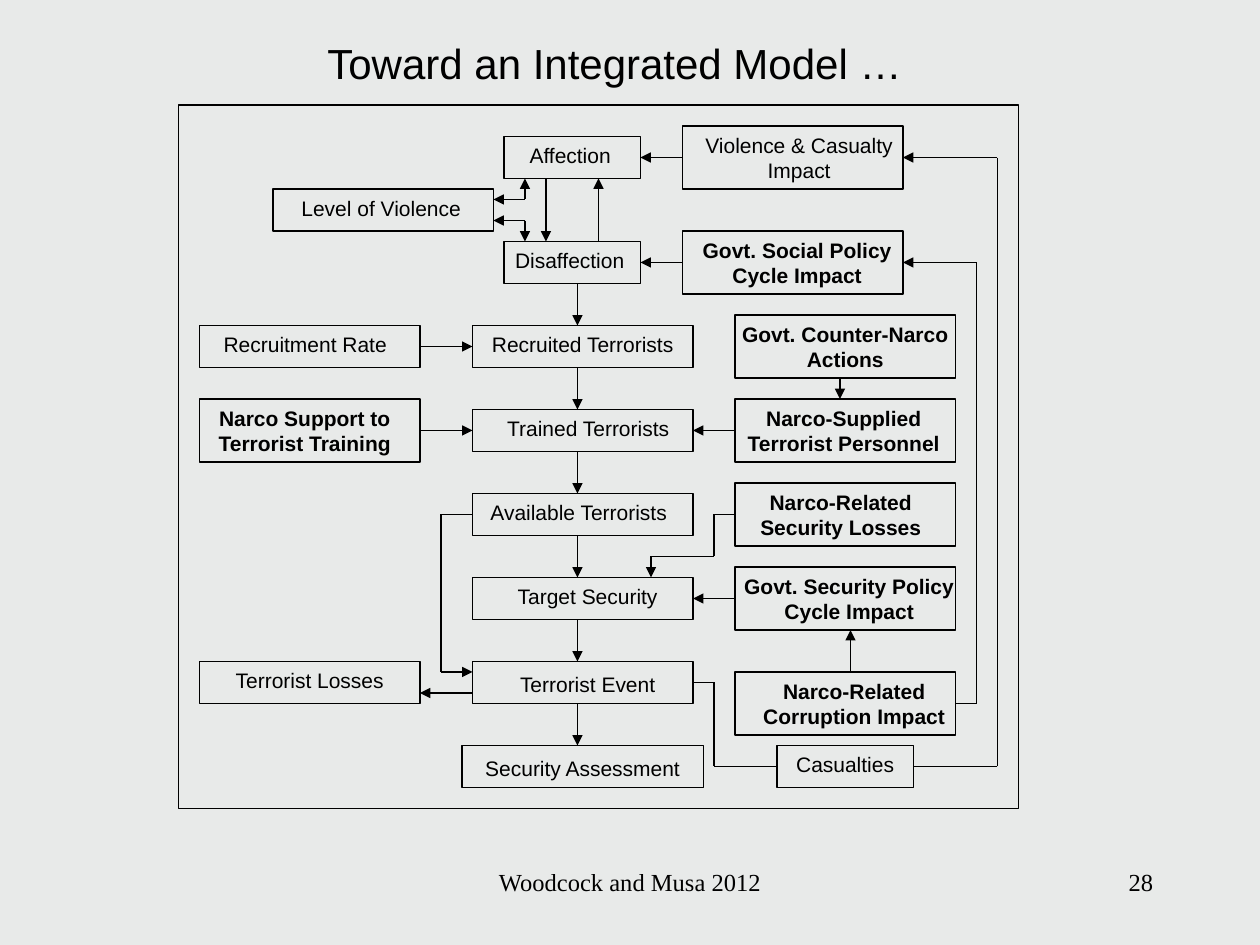
"""Build the slide showing an integrated model of affection, terrorism and narco links."""
from dataclasses import dataclass
from itertools import pairwise

from lxml.etree import SubElement
from pptx import Presentation
from pptx.dml.color import RGBColor
from pptx.enum.shapes import MSO_CONNECTOR, MSO_SHAPE
from pptx.enum.text import MSO_ANCHOR, PP_ALIGN
from pptx.oxml.ns import qn
from pptx.util import Cm, Pt


@dataclass(frozen=True)
class Theme:
    ink: RGBColor = RGBColor(0x00, 0x00, 0x00)
    paper: RGBColor = RGBColor(0xE8, 0xEA, 0xE9)
    sans: str = "Arial"
    serif: str = "Times New Roman"
    head: int = 24
    foot: int = 14
    body: int = 12
    rule: float = 0.75


theme = Theme()
STEP = 2.54 / 12


def grid(*units):
    return [Cm(unit * STEP) for unit in units]


def write(frame, text, size, font, align, bold=False):
    frame.word_wrap = True
    frame.vertical_anchor = MSO_ANCHOR.TOP
    for row, words in enumerate(text.split("\n")):
        para = frame.add_paragraph() if row else frame.paragraphs[0]
        para.alignment = align
        run = para.add_run()
        run.text = words
        run.font.size = Pt(size)
        run.font.name = font
        run.font.bold = bold
        run.font.color.rgb = theme.ink


deck = Presentation()
deck.slide_width, deck.slide_height = Cm(25.4), Cm(19.05)
slide = deck.slides.add_slide(deck.slide_layouts[6])
slide.background.fill.solid()
slide.background.fill.fore_color.rgb = theme.paper

labels = [
    ("Toward an Integrated Model …", (30, 3, 60, 6), theme.head, theme.sans, PP_ALIGN.LEFT),
    ("Woodcock and Musa 2012", (41, 82, 38, 6), theme.foot, theme.serif, PP_ALIGN.CENTER),
    ("28", (86, 82, 25, 6), theme.foot, theme.serif, PP_ALIGN.RIGHT),
]
for text, place, size, font, align in labels:
    label = slide.shapes.add_textbox(*grid(*place))
    write(label.text_frame, text, size, font, align)

# Text, grid place, bold, sideways nudge and top inset in centimetres
boxes = [
    ("", (17, 10, 80, 67), False, 0, 0.13),
    ("Affection", (48, 13, 13, 4), False, -0.04, 0.13),
    ("Disaffection", (48, 23, 13, 4), False, -0.05, 0.13),
    ("Level of Violence", (26, 18, 21, 4), False, -0.04, 0.13),
    ("Recruited Terrorists", (45, 31, 21, 4), False, 0, 0.13),
    ("Trained Terrorists", (45, 39, 21, 4), False, 0.11, 0.13),
    ("Available Terrorists", (45, 47, 21, 4), False, -0.08, 0.13),
    ("Target Security", (45, 55, 21, 4), False, 0.1, 0.13),
    ("Terrorist Event", (45, 63, 21, 4), False, 0.1, 0.21),
    ("Security Assessment", (44, 71, 23, 4), False, 0, 0.21),
    ("Recruitment Rate", (19, 31, 21, 4), False, -0.09, 0.13),
    ("Narco Support to Terrorist Training", (19, 38, 21, 6), True, -0.1, 0.13),
    ("Terrorist Losses", (19, 63, 21, 4), False, 0, 0.13),
    ("Violence & Casualty\nImpact", (65, 12, 21, 6), False, 0.13, 0.13),
    ("Govt. Social Policy\nCycle Impact", (65, 22, 21, 6), True, 0.09, 0.13),
    ("Govt. Counter-Narco\nActions", (70, 30, 21, 6), True, 0, 0.13),
    ("Narco-Supplied\nTerrorist Personnel", (70, 38, 21, 6), True, -0.03, 0.13),
    ("Narco-Related\nSecurity Losses", (70, 46, 21, 6), True, -0.09, 0.13),
    ("Govt. Security Policy\nCycle Impact", (70, 54, 21, 6), True, 0.08, 0.13),
    ("Narco-Related\nCorruption Impact", (70, 64, 21, 6), True, 0.18, 0.13),
    ("Casualties", (74, 71, 13, 4), False, 0, 0.13),
]
ports = {}
for text, (x, y, w, h), bold, nudge, inset in boxes:
    box = slide.shapes.add_shape(MSO_SHAPE.RECTANGLE, *grid(x, y, w, h))
    box.shadow.inherit = False
    box.fill.background()
    box.line.color.rgb = theme.ink
    box.line.width = Pt(theme.rule)
    sides = [(x + w / 2, y), (x, y + h / 2), (x + w / 2, y + h), (x + w, y + h / 2)]
    ports.update({spot: (box, side) for side, spot in enumerate(sides)})
    if text:
        frame = box.text_frame
        frame.margin_left = Cm(max(2 * nudge, 0))
        frame.margin_right = Cm(max(-2 * nudge, 0))
        frame.margin_top, frame.margin_bottom = Cm(inset), Cm(0)
        write(frame, text, theme.body, theme.sans, PP_ALIGN.CENTER, bold)

spine = [([(55, y), (55, y + 4)], "end") for y in range(27, 68, 8)]
routes = spine + [
    ([(52, 17), (52, 23)], "end"),
    ([(57, 23), (57, 17)], "end"),
    ([(47, 19), (50, 19), (50, 17)], "both"),
    ([(47, 21), (50, 21), (50, 23)], "both"),
    ([(65, 15), (61, 15)], "end"),
    ([(65, 25), (61, 25)], "end"),
    ([(40, 33), (45, 33)], "end"),
    ([(40, 41), (45, 41)], "end"),
    ([(70, 41), (66, 41)], "end"),
    ([(70, 57), (66, 57)], "end"),
    ([(45, 66), (40, 66)], "end"),
    ([(80, 36), (80, 38)], "end"),
    ([(81, 64), (81, 60)], "end"),
    ([(45, 49), (42, 49), (42, 64), (45, 64)], "end"),
    ([(70, 49), (68, 49), (68, 53), (62, 53), (62, 55)], "end"),
    ([(91, 67), (93, 67), (93, 25), (86, 25)], "end"),
    ([(66, 65), (68, 65), (68, 73), (74, 73)], "none"),
    ([(87, 73), (95, 73), (95, 15), (86, 15)], "end"),
]
for spots, heads in routes:
    for start, stop in pairwise(spots):
        link = slide.shapes.add_connector(MSO_CONNECTOR.STRAIGHT, *grid(*start, *stop))
        link.line.color.rgb = theme.ink
        link.line.width = Pt(theme.rule)
        if start in ports:
            link.begin_connect(*ports[start])
        if stop in ports:
            link.end_connect(*ports[stop])
        line = link.line._get_or_add_ln()
        if heads == "both" and start == spots[0]:
            SubElement(line, qn("a:headEnd"), type="triangle")
        if heads != "none" and stop == spots[-1]:
            SubElement(line, qn("a:tailEnd"), type="triangle")
        SubElement(link._element.spPr, qn("a:effectLst"))

deck.save("out.pptx")
